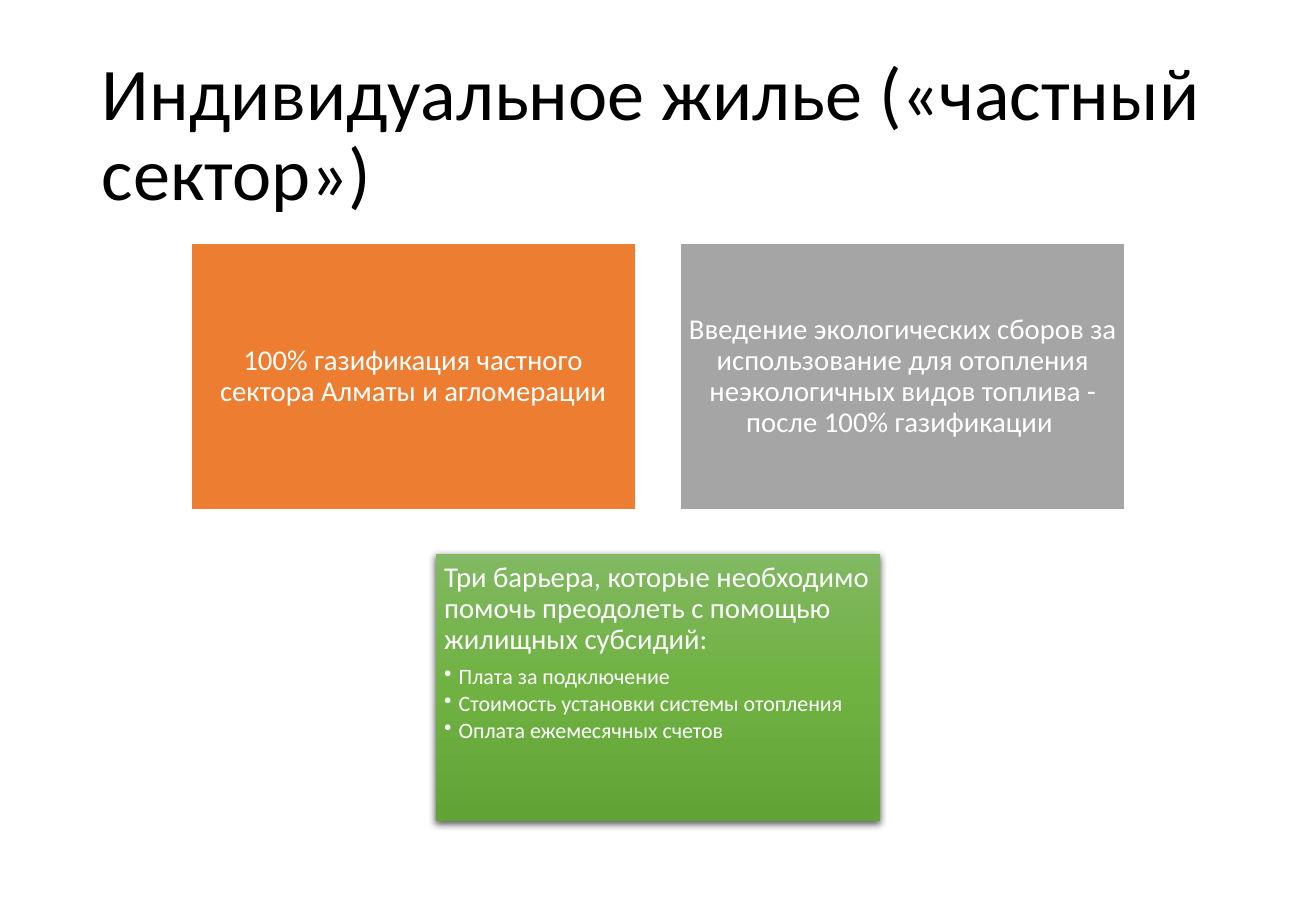
from pptx import Presentation
from pptx.dml.color import RGBColor
from pptx.enum import shapes, text
from pptx.oxml import parse_xml
from pptx.oxml.ns import nsdecls
from pptx.util import Inches, Pt

BLACK = RGBColor(0x00, 0x00, 0x00)
WHITE = RGBColor(0xFF, 0xFF, 0xFF)
ORANGE = RGBColor(0xED, 0x7D, 0x31)
GRAY = RGBColor(0xA5, 0xA5, 0xA5)
GREEN_STOPS = [
    (0, RGBColor(0x81, 0xB8, 0x61)),
    (50, RGBColor(0x6F, 0xB2, 0x42)),
    (100, RGBColor(0x62, 0xA3, 0x36)),
]

CARD_W, CARD_H = 3.66, 2.2
GAP_X, GAP_Y = 0.37, 0.36
LEFT, TOP = 1.57, 2
INSET = 0.07
INDENT = 0.12


def add_text(tf, i, content, size, color, **formats):
    p = tf.paragraphs[0] if i == 0 else tf.add_paragraph()
    for name, value in formats.items():
        setattr(p, name, value)
    p.line_spacing = 0.9
    r = p.add_run()
    r.text = content
    r.font.name, r.font.size, r.font.color.rgb = "Calibri", Pt(size), color
    return p


prs = Presentation()
prs.slide_width, prs.slide_height = Inches(10.83), Inches(7.5)
s = prs.slides.add_slide(prs.slide_layouts[6])

# Title
tf = s.shapes.add_textbox(Inches(0.74), Inches(0.4), Inches(9.34), Inches(1.45)).text_frame
tf.word_wrap = True
tf.vertical_anchor = text.MSO_ANCHOR.MIDDLE
add_text(tf, 0, "Индивидуальное жилье («частный сектор»)", 44, BLACK)

# Cards: two on top, one centred below (column, row, fill, heading, bullets)
cards = [
    (0, 0, ORANGE, "100% газификация частного сектора Алматы и агломерации", []),
    (1, 0, GRAY, "Введение экологических сборов за использование для отопления "
     "неэкологичных видов топлива - после 100% газификации ", []),
    (0.5, 1, None, "Три барьера, которые необходимо помочь преодолеть с помощью "
     "жилищных субсидий:",
     ["Плата за подключение", "Стоимость установки системы отопления",
      "Оплата ежемесячных счетов"]),
]
for col, row, fill, heading, bullets in cards:
    sp = s.shapes.add_shape(
        shapes.MSO_SHAPE.RECTANGLE,
        Inches(LEFT + col * (CARD_W + GAP_X)), Inches(TOP + row * (CARD_H + GAP_Y)),
        Inches(CARD_W), Inches(CARD_H))
    sp.shadow.inherit = False
    if fill:
        sp.fill.solid()
        sp.fill.fore_color.rgb = fill
        sp.line.color.rgb = WHITE
        sp.line.width = Pt(1)
    else:
        # Green gradient and soft shadow
        sp.line.fill.background()
        stops = "".join(f'<a:gs pos="{pos * 1000}"><a:srgbClr val="{color}"/></a:gs>'
                        for pos, color in GREEN_STOPS)
        spPr = sp._element.spPr
        spPr.insert(2, parse_xml(
            f'<a:gradFill {nsdecls("a")} rotWithShape="1"><a:gsLst>{stops}</a:gsLst>'
            '<a:lin ang="5400000" scaled="0"/></a:gradFill>'))
        spPr[-1].append(parse_xml(
            f'<a:outerShdw {nsdecls("a")} blurRad="{Pt(4.5)}" dist="{Pt(1.5)}" '
            'dir="5400000" algn="ctr" rotWithShape="0"><a:srgbClr val="000000">'
            '<a:alpha val="63000"/></a:srgbClr></a:outerShdw>'))

    tf = sp.text_frame
    tf.word_wrap = True
    for side in ("left", "top", "right", "bottom"):
        setattr(tf, f"margin_{side}", Inches(INSET))
    tf.vertical_anchor = text.MSO_ANCHOR.TOP if bullets else text.MSO_ANCHOR.MIDDLE
    align = text.PP_ALIGN.LEFT if bullets else text.PP_ALIGN.CENTER
    add_text(tf, 0, heading, 17, WHITE, alignment=align, space_after=Pt(6))
    for i, item in enumerate(bullets, 1):
        p = add_text(tf, i, item, 13, WHITE, alignment=align, level=1, space_after=Pt(2))
        pPr = p._p.get_or_add_pPr()
        pPr.set("marL", str(Inches(INDENT)))
        pPr.set("indent", str(-Inches(INDENT)))
        pPr.append(parse_xml(f'<a:buChar {nsdecls("a")} char="•"/>'))

prs.save("out.pptx")
